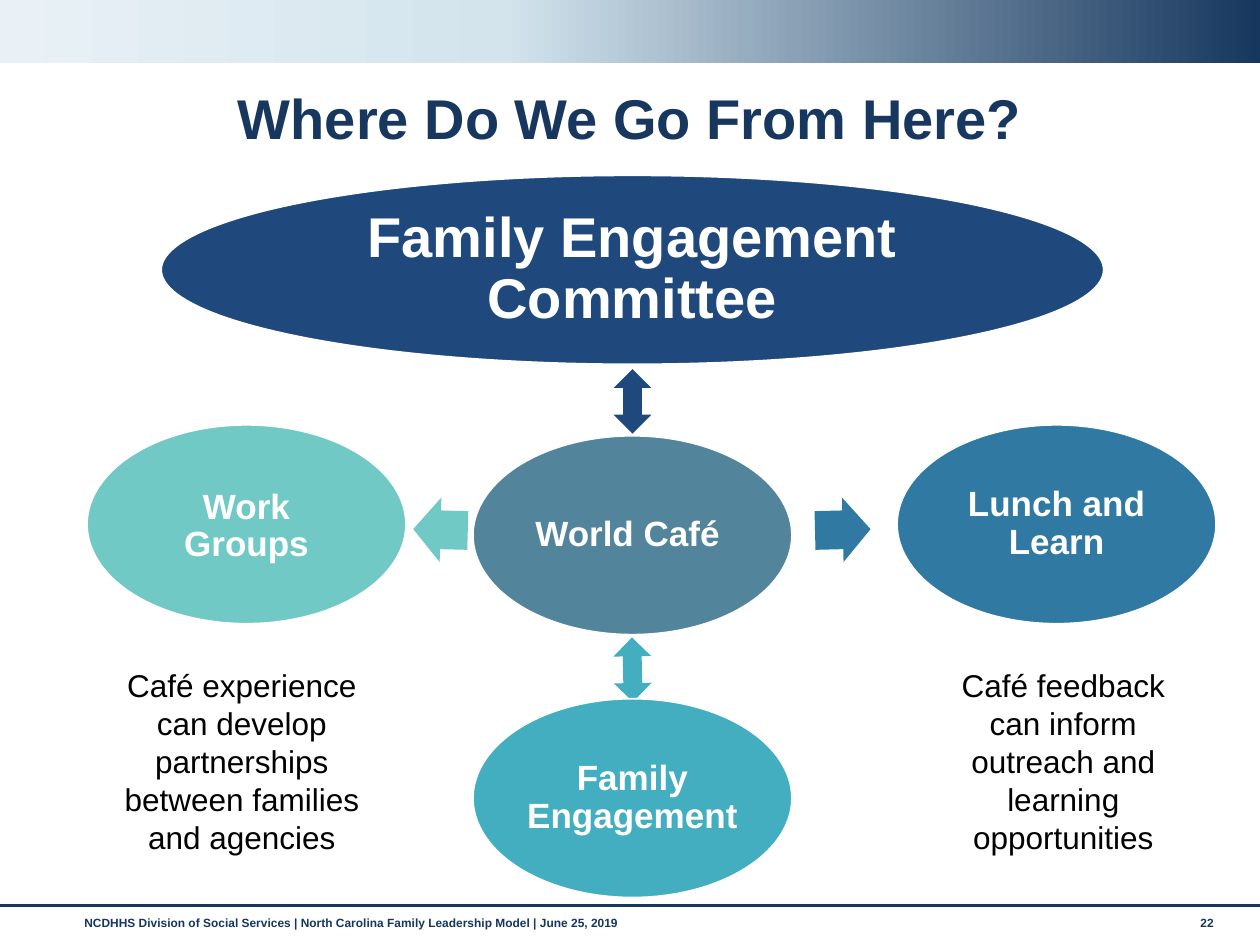
from copy import deepcopy

from lxml import etree
from pptx import Presentation
from pptx.dml.color import RGBColor
from pptx.enum.shapes import MSO_CONNECTOR, MSO_SHAPE
from pptx.enum.text import MSO_ANCHOR, PP_ALIGN
from pptx.oxml.ns import qn
from pptx.util import Cm, Pt

ELLIPSE, RECT = MSO_SHAPE.OVAL, MSO_SHAPE.RECTANGLE
RIGHT_ARROW, UP_DOWN_ARROW = MSO_SHAPE.RIGHT_ARROW, MSO_SHAPE.UP_DOWN_ARROW
STRAIGHT = MSO_CONNECTOR.STRAIGHT
LEFT, CENTER = PP_ALIGN.LEFT, PP_ALIGN.CENTER
TOP, MIDDLE = MSO_ANCHOR.TOP, MSO_ANCHOR.MIDDLE

FONT = "Arial"
NAVY = RGBColor(0x17, 0x37, 0x5E)
FOOTER_NAVY = RGBColor(0x15, 0x36, 0x5E)
BLUE = RGBColor(0x1F, 0x49, 0x7D)
SLATE = RGBColor(0x52, 0x84, 0x9C)
OCEAN = RGBColor(0x2F, 0x79, 0xA2)
TEAL = RGBColor(0x44, 0xAE, 0xC1)
MINT = RGBColor(0x71, 0xC9, 0xC5)
PALE = RGBColor(0xD3, 0xE4, 0xED)
PALEST = RGBColor(0xE9, 0xF1, 0xF6)
WHITE = RGBColor(0xFF, 0xFF, 0xFF)
BLACK = RGBColor(0, 0, 0)

# Centimetres
SLIDE_W, SLIDE_H = 25.4, 19.05
NODE_W, NODE_H = 6.43, 4.01
MID_X = 16.06 - 3.29 + 0.01 - NODE_W / 2 + 3.21  # centre of the middle column


def write(tf, text, size=18, color=BLACK, bold=False, align=CENTER,
          anchor=TOP, spacing=None, after=0, inset=None):
    """Fill a text frame; each line of text becomes a paragraph."""
    tf.word_wrap = True
    tf.vertical_anchor = anchor
    if inset is not None:
        tf.margin_left = tf.margin_right = Cm(inset)
        tf.margin_top = tf.margin_bottom = Cm(inset)
    lines = text.split("\n")
    for i, line in enumerate(lines):
        p = tf.paragraphs[0] if i == 0 else tf.add_paragraph()
        p.alignment = align
        if i == len(lines) - 1:
            p.space_after = Pt(after)
            if spacing:
                p.line_spacing = spacing
        r = p.add_run()
        r.text = line
        r.font.name, r.font.size, r.font.bold = FONT, Pt(size), bold
        r.font.color.rgb = color


def add_text(s, x, y, w, h, text, **fmt):
    box = s.shapes.add_textbox(Cm(x), Cm(y), Cm(w), Cm(h))
    write(box.text_frame, text, **fmt)


def add_filled(s, kind, x, y, w, h, color):
    sp = s.shapes.add_shape(kind, Cm(x), Cm(y), Cm(w), Cm(h))
    sp.shadow.inherit = False
    sp.fill.solid()
    sp.fill.fore_color.rgb = color
    sp.line.fill.background()
    return sp


def add_node(s, cx, cy, text, color, w=NODE_W, h=NODE_H, size=20, inset=0.08):
    """Labelled ellipse placed by its centre."""
    sp = add_filled(s, ELLIPSE, cx - w / 2, cy - h / 2, w, h, color)
    sp.line.color.rgb = WHITE
    sp.line.width = Pt(1)
    write(sp.text_frame, text, size=size, color=WHITE, bold=True,
          anchor=MIDDLE, spacing=0.9, after=round(size * 0.35), inset=inset)


def add_arrow(s, kind, cx, cy, w, color, rotation, adjustments=()):
    """Block arrow placed by its centre."""
    h = 1.3
    sp = add_filled(s, kind, cx - w / 2, cy - h / 2, w, h, color)
    sp.rotation = rotation
    for i, value in enumerate(adjustments):
        sp.adjustments[i] = value


def add_banner(s):
    """Gradient band across the top, dark at the right."""
    sp = add_filled(s, RECT, 0, 0, SLIDE_W, 1.27, NAVY)
    sp.fill.gradient()
    sp.fill.gradient_angle = 180
    stops = sp.fill._fill._gradFill.find(qn("a:gsLst"))
    stops.append(deepcopy(stops[0]))
    shades = zip(sp.fill.gradient_stops, (0, 0.6, 1), (NAVY, PALE, PALEST))
    for stop, position, color in shades:
        stop.position = position
        stop.color.rgb = color


def add_footer(s):
    rule = s.shapes.add_connector(STRAIGHT, 0, Cm(18.26), Cm(SLIDE_W), Cm(18.26))
    rule.line.color.rgb = NAVY
    rule.line.width = Pt(1.75)
    etree.SubElement(rule._element.spPr, qn("a:effectLst"))
    fmt = dict(size=6.8, color=FOOTER_NAVY, bold=True, align=LEFT)
    add_text(s, 1.45, 18.34, 22.2, 0.74,
             "NCDHHS Division of Social Services | North Carolina Family "
             "Leadership Model | June 25, 2019", **fmt)
    add_text(s, 23.95, 18.34, 1.12, 0.74, "22", **fmt)


def add_title(s, text):
    sp = s.shapes.title
    sp.left, sp.top, sp.width, sp.height = 0, Cm(1.68), Cm(SLIDE_W), Cm(1.52)
    write(sp.text_frame, text, size=32, color=NAVY, bold=True,
          anchor=MIDDLE, spacing=0.9)


def add_diagram(s):
    mid_x, left_x, right_x = 12.75, 4.97, 21.3
    side_y = 10.57
    block = (0.6, 0.5)
    # World Café, then each neighbour with its arrow
    add_node(s, mid_x, 10.79, "World Café ", SLATE)
    add_arrow(s, UP_DOWN_ARROW, mid_x, 8.09, 0.76, BLUE, 180)
    add_node(s, mid_x, 5.44, "Family Engagement Committee", BLUE,
             w=19, h=3.81, size=32, inset=0.1)
    add_arrow(s, RIGHT_ARROW, 16.99, 10.68, 1.12, OCEAN, 358.6, block)
    add_node(s, right_x, side_y, "Lunch and Learn", OCEAN)
    add_arrow(s, UP_DOWN_ARROW, mid_x, 13.5, 0.76, TEAL, 359)
    add_node(s, mid_x, 16.09, "Family Engagement", TEAL)
    add_arrow(s, RIGHT_ARROW, 8.88, 10.68, 1.1, MINT, 181.5, block)
    add_node(s, left_x, side_y, "Work\nGroups", MINT)


def main():
    prs = Presentation()
    prs.slide_width, prs.slide_height = Cm(SLIDE_W), Cm(SLIDE_H)
    s = prs.slides.add_slide(prs.slide_layouts[5])
    add_footer(s)
    add_banner(s)
    add_diagram(s)
    add_title(s, "Where Do We Go From Here?")
    # Notes under the side ellipses
    add_text(s, 1.88, 13.31, 5.99, 4.11, "Café experience can develop "
             "partnerships between families and agencies")
    add_text(s, 18.82, 13.31, 5.23, 4.11, "Café feedback can inform "
             "outreach and learning opportunities")
    prs.save("out.pptx")


if __name__ == "__main__":
    main()
